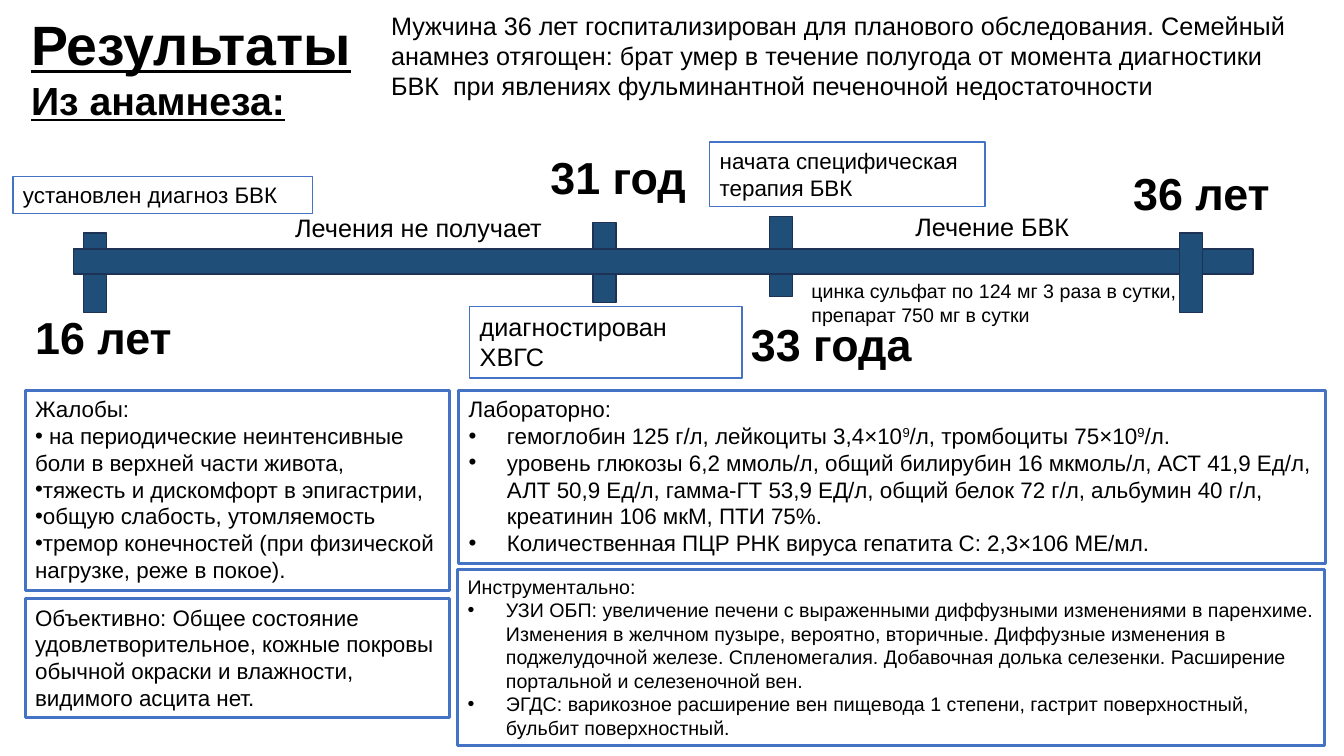
from lxml import etree
from pptx import Presentation
from pptx.dml.color import RGBColor
from pptx.enum.shapes import MSO_SHAPE
from pptx.enum.text import MSO_ANCHOR, MSO_AUTO_SIZE, PP_ALIGN
from pptx.oxml.ns import qn
from pptx.util import Inches, Pt

RECT = MSO_SHAPE.RECTANGLE
TOP, MIDDLE = MSO_ANCHOR.TOP, MSO_ANCHOR.MIDDLE
NO_FIT, GROW = MSO_AUTO_SIZE.NONE, MSO_AUTO_SIZE.SHAPE_TO_FIT_TEXT
LEFT = PP_ALIGN.LEFT

FONT = "Arial"
COLORS = {"text": "000000", "white": "FFFFFF", "frame": "4472C4",
          "axis": "1F4E79", "axis_edge": "1E3256"}

INTRO = ("Мужчина 36 лет госпитализирован для планового обследования. "
         "Семейный анамнез отягощен: брат умер в течение полугода от момента "
         "диагностики БВК  при явлениях фульминантной печеночной недостаточности")

COMPLAINTS = ["Жалобы:",
              " на периодические неинтенсивные боли в верхней части живота,",
              "тяжесть и дискомфорт в эпигастрии,",
              "общую слабость, утомляемость",
              "тремор конечностей (при физической нагрузке, реже в покое)."]

OBJECTIVE = ["Объективно: Общее состояние удовлетворительное, кожные покровы "
             "обычной окраски и влажности, видимого асцита нет."]

# Text between ^ marks is superscript
LABORATORY = ["Лабораторно:",
              "гемоглобин 125 г/л, лейкоциты 3,4×10^9^/л, тромбоциты 75×10^9^/л.",
              "уровень глюкозы 6,2 ммоль/л, общий билирубин 16 мкмоль/л, "
              "АСТ 41,9 Ед/л, АЛТ 50,9 Ед/л, гамма-ГТ 53,9 ЕД/л, общий белок "
              "72 г/л, альбумин 40 г/л, креатинин 106 мкМ, ПТИ 75%.",
              "Количественная ПЦР РНК вируса гепатита С: 2,3×106 МЕ/мл."]

INSTRUMENTAL = ["Инструментально:",
                "УЗИ ОБП: увеличение печени с выраженными диффузными изменениями "
                "в паренхиме. Изменения в желчном пузыре, вероятно, вторичные. "
                "Диффузные изменения в поджелудочной железе. Спленомегалия. "
                "Добавочная долька селезенки. Расширение портальной и "
                "селезеночной вен.",
                "ЭГДС: варикозное расширение вен пищевода 1 степени, гастрит "
                "поверхностный, бульбит поверхностный."]


def color(name):
    return RGBColor.from_string(COLORS[name])


def style_run(run, size, bold=False):
    run.font.name = FONT
    run.font.size = Pt(size)
    run.font.bold = bold
    run.font.underline = False
    run.font.color.rgb = color("text")


def add_bullet(paragraph, indent):
    props = paragraph._p.get_or_add_pPr()
    props.set("marL", str(Inches(indent)))
    props.set("indent", str(Inches(-indent)))
    etree.SubElement(props, qn("a:buFont")).set("typeface", FONT)
    etree.SubElement(props, qn("a:buChar")).set("char", "•")


def write(frame, lines, size, bold=False, indent=0, wrap=True):
    """First line is a heading, the others are bulleted."""
    frame.word_wrap = wrap
    frame.auto_size = GROW
    frame.vertical_anchor = TOP
    for number, line in enumerate(lines):
        paragraph = frame.paragraphs[0] if number == 0 else frame.add_paragraph()
        paragraph.alignment = LEFT
        if number:
            add_bullet(paragraph, indent)
        for part, piece in enumerate(line.split("^")):
            run = paragraph.add_run()
            run.text = piece
            style_run(run, size, bold)
            if part % 2:
                run._r.get_or_add_rPr().set("baseline", "30000")


def add_label(slide, box, text, size, bold=False, wrap=True):
    label = slide.shapes.add_textbox(*map(Inches, box))
    write(label.text_frame, [text], size, bold, wrap=wrap)
    return label


def add_rect(slide, box, fill, edge, width):
    rect = slide.shapes.add_shape(RECT, *map(Inches, box))
    rect.shadow.inherit = False
    rect.fill.solid()
    rect.fill.fore_color.rgb = color(fill)
    rect.line.color.rgb = color(edge)
    rect.line.width = Pt(width)
    return rect


def add_panel(slide, box, lines, size=16, width=2.25, indent=0):
    panel = add_rect(slide, box, "white", "frame", width)
    write(panel.text_frame, lines, size, indent=indent)


def build_header(slide, left, top, width, height):
    title = slide.shapes.title
    title.left, title.top = Inches(left), Inches(top)
    title.width, title.height = Inches(width), Inches(height)
    frame = title.text_frame
    frame.text = "Результаты"
    frame.auto_size = NO_FIT
    frame.vertical_anchor = MIDDLE
    heading = frame.paragraphs[0]
    heading.alignment = LEFT
    heading.line_spacing = 0.9
    style_run(heading.runs[0], 39.6, True)
    heading.runs[0].font.underline = True

    subtitle = add_label(slide, (left, top + 0.57, 5.43, 0.57),
                         "Из анамнеза:", 28, True)
    subtitle.text_frame.paragraphs[0].runs[0].font.underline = True
    add_label(slide, (left + width, top - 0.09, 9.38, 1.01), INTRO, 18)


def build_timeline(slide, left, top, width, height):
    def add_mark(offset, rise):
        add_rect(slide, (left + offset, top - rise, 0.23, 0.79),
                 "axis", "axis_edge", 1)

    # Axis: the last mark lies over the bar
    for offset, rise in ((0.1, 0.16), (5.15, 0.26), (6.9, 0.32)):
        add_mark(offset, rise)
    add_rect(slide, (left, top, width, height), "axis", "axis_edge", 1)
    add_mark(10.97, 0.16)

    # Ages
    for age, dx, dy in (("16 лет", -0.48, 0.55), ("31 год", 4.63, -1.03),
                        ("33 года", 6.62, 0.62), ("36 лет", 10.41, -0.88)):
        add_label(slide, (left + dx, top + dy, 2.25, 0.64), age, 32, True)

    # Events
    for event, dx, dy, w, h, size in (
            ("установлен диагноз БВК", -0.6, -0.72, 2.97, 0.37, 16),
            ("диагностирован ХВГС", 3.93, 0.57, 2.7, 0.71, 18),
            ("начата специфическая терапия БВК", 6.31, -1.06, 2.73, 0.64, 16)):
        add_panel(slide, (left + dx, top + dy, w, h), [event], size, 1)

    # Treatment periods
    add_label(slide, (left + 2.1, top - 0.41, 2.74, 0.4),
              "Лечения не получает", 18, wrap=False)
    add_label(slide, (left + 8.25, top - 0.42, 1.82, 0.4),
              "Лечение БВК", 18, wrap=False)
    add_label(slide, (left + 7.22, top + height, 4.67, 0.57),
              "цинка сульфат по 124 мг 3 раза в сутки, препарат 750 мг в сутки", 14)


def build_findings(slide, left, top, width):
    patient_width, tests_width = 4.21, 8.6
    tests_left = left + width - tests_width
    add_panel(slide, (left, top, patient_width, 1.99), COMPLAINTS)
    add_panel(slide, (left, top + 2.07, patient_width, 1.18), OBJECTIVE)
    add_panel(slide, (tests_left, top, tests_width, 1.72), LABORATORY,
              indent=0.38)
    add_panel(slide, (tests_left - 0.01, top + 1.78, tests_width, 1.75),
              INSTRUMENTAL, 14, indent=0.38)


def main():
    deck = Presentation()
    deck.slide_width, deck.slide_height = Inches(13.33), Inches(7.5)
    slide = deck.slides.add_slide(deck.slide_layouts[5])
    build_header(slide, 0.21, 0.14, 3.57, 0.66)
    build_timeline(slide, 0.73, 2.47, 11.7, 0.25)
    build_findings(slide, 0.25, 3.87, 12.9)
    deck.save("out.pptx")


if __name__ == "__main__":
    main()
